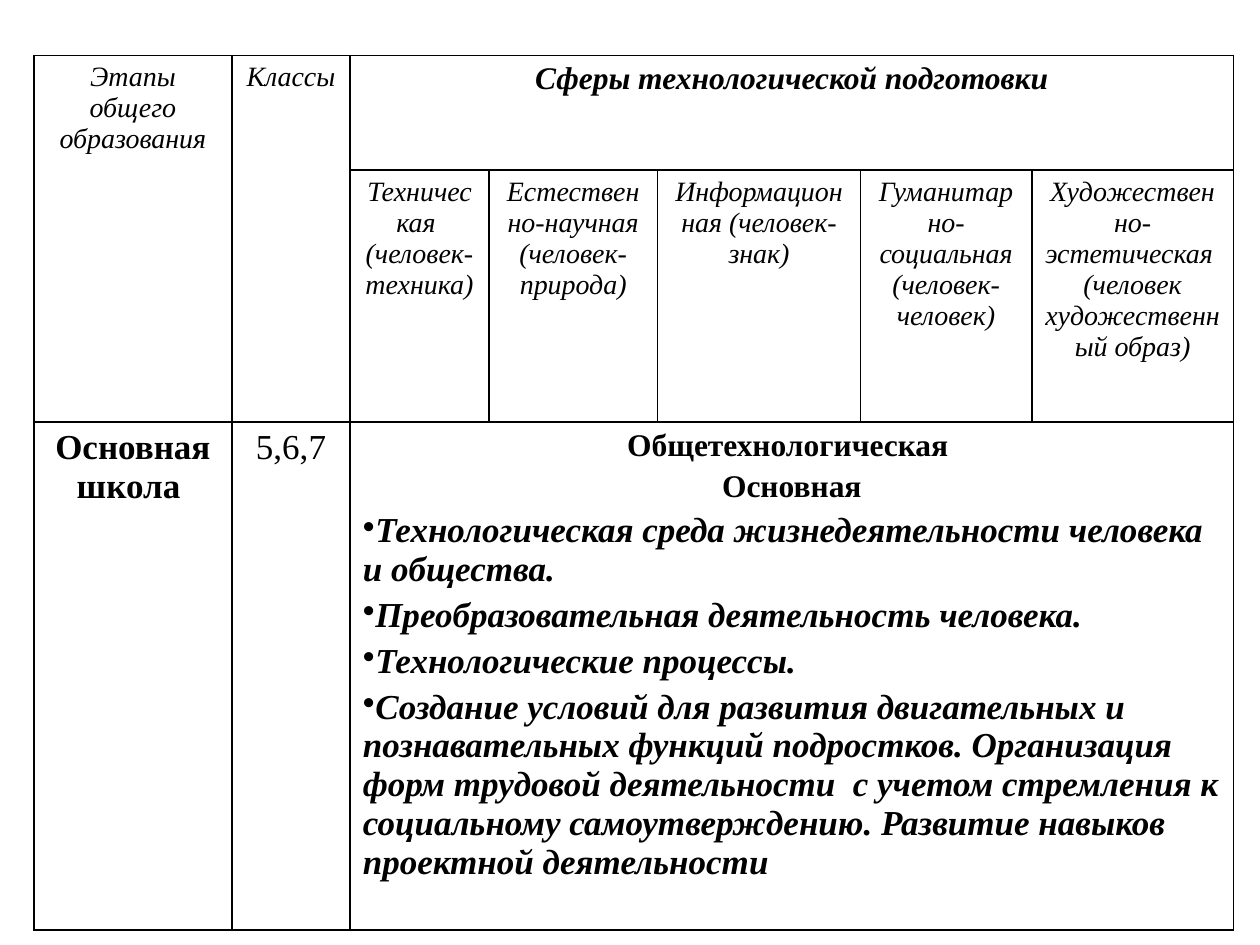
from dataclasses import dataclass

from lxml.etree import SubElement as Sub
from pptx import Presentation
from pptx.dml.color import RGBColor as Rgb
from pptx.enum.text import PP_ALIGN as Align
from pptx.oxml.ns import qn
from pptx.table import Table, _Cell as Cell
from pptx.util import Inches, Pt

BLACK = Rgb(0, 0, 0)
FONT = "Times New Roman"
COLS = [1.57, 0.94, 1.1, 1.34, 1.61, 1.36, 1.6]
ROWS = [0.91, 2, 4.03]


@dataclass
class Line:
    text: str
    size: int = 16
    bold: bool = False
    slant: bool = True
    dot: bool = False
    gap: float = 0


@dataclass
class Item:
    row: int
    col: int
    lines: list[Line]
    down: int = 1
    wide: int = 1


def dotted(text: str) -> Line:
    return Line(text, 20, bold=True, dot=True, gap=4)


SPHERES = [
    ["Техническая ", "(человек-техника)"],
    ["Естественно-научная", "(человек- природа)"],
    ["Информационная (человек-знак)"],
    ["Гуманитарно-социальная (человек-человек)"],
    ["Художественно-эстетическая ", "(человек художественный образ)"],
]
ITEMS = [
    Item(0, 0, [Line("Этапы общего образования")], down=2),
    Item(0, 1, [Line("Классы")], down=2),
    Item(0, 2, [Line("Сферы технологической подготовки", 18, bold=True)], wide=5),
    *(Item(1, col, [Line(text) for text in texts])
      for col, texts in enumerate(SPHERES, 2)),
    Item(2, 0, [Line("Основная школа ", 20, bold=True, slant=False)]),
    Item(2, 1, [Line("5,6,7", 20, slant=False)]),
    Item(2, 2, [
        Line("Общетехнологическая ", 18, bold=True, slant=False, gap=3.6),
        Line("Основная", 18, bold=True, slant=False, gap=3.6),
        dotted("Технологическая среда жизнедеятельности человека и общества."),
        dotted("Преобразовательная деятельность человека."),
        dotted("Технологические процессы."),
        dotted("Создание условий для развития двигательных и познавательных "
               "функций подростков. Организация форм трудовой деятельности  "
               "с учетом стремления к социальному самоутверждению. "
               "Развитие навыков проектной деятельности"),
    ], wide=5),
]


def frame(cell: Cell) -> None:
    props = cell._tc.get_or_add_tcPr()
    for side in "LRTB":
        edge = Sub(props, qn(f"a:ln{side}"), w=str(Pt(1)))
        fill = Sub(edge, qn("a:solidFill"))
        Sub(fill, qn("a:srgbClr"), val=str(BLACK))
    cell.fill.background()


def write(cell: Cell, lines: list[Line]) -> None:
    text = cell.text_frame
    text.text = "\n".join(line.text for line in lines)
    for para, line in zip(text.paragraphs, lines):
        para.alignment = Align.LEFT if line.dot else Align.CENTER
        para.space_before = Pt(line.gap)
        font = para.font
        font.name, font.size = FONT, Pt(line.size)
        font.bold, font.italic = line.bold, line.slant
        font.color.rgb = BLACK
        if line.dot:
            props = para._p.get_or_add_pPr()
            mark = Sub(props, qn("a:buChar"), char="•")
            props.find(qn("a:defRPr")).addprevious(mark)


def place(table: Table, item: Item) -> None:
    cell = table.cell(item.row, item.col)
    if item.down * item.wide > 1:
        cell.merge(table.cell(item.row + item.down - 1, item.col + item.wide - 1))
    write(cell, item.lines)


def main() -> None:
    deck = Presentation()
    deck.slide_width, deck.slide_height = Inches(10), Inches(7.5)
    slide = deck.slides.add_slide(deck.slide_layouts[6])
    table = slide.shapes.add_table(
        len(ROWS), len(COLS), Inches(0.27), Inches(0.44),
        Inches(sum(COLS)), Inches(sum(ROWS))).table
    table.first_row = table.horz_banding = False
    for col, width in zip(table.columns, COLS):
        col.width = Inches(width)
    for row, height in zip(table.rows, ROWS):
        row.height = Inches(height)
    for cell in table.iter_cells():
        frame(cell)
    for item in ITEMS:
        place(table, item)
    deck.save("out.pptx")


if __name__ == "__main__":
    main()
